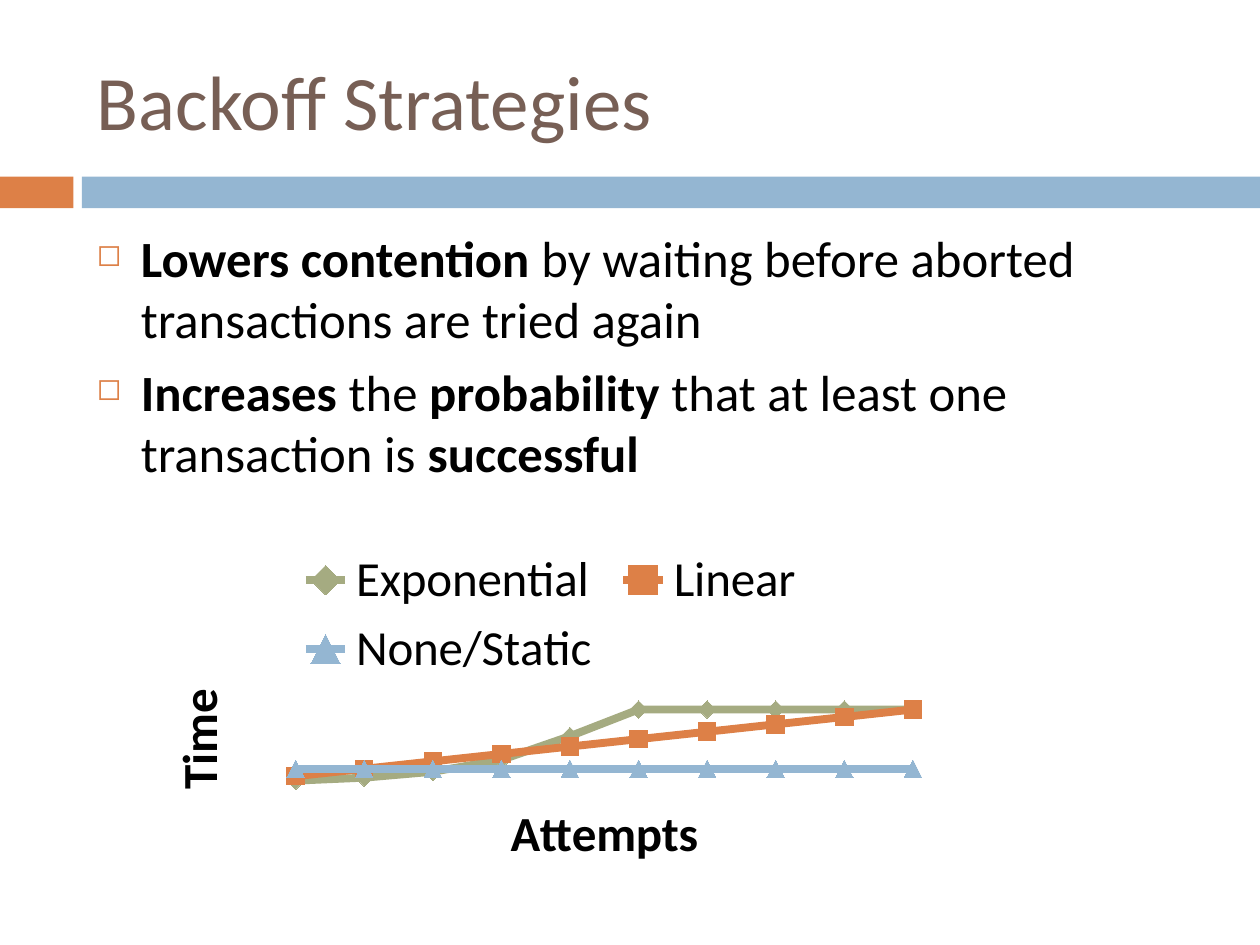
from lxml import etree
from pptx import Presentation
from pptx.chart.data import CategoryChartData
from pptx.dml.color import RGBColor
from pptx.enum import chart as kinds, shapes, text
from pptx.oxml import parse_xml
from pptx.oxml.ns import nsdecls, qn
from pptx.util import Cm, Pt

ORANGE = RGBColor(0xDD, 0x80, 0x47)
BLUE = RGBColor(0x94, 0xB6, 0xD2)
GREEN = RGBColor(0xA5, 0xAB, 0x81)
BROWN = RGBColor(0x77, 0x5F, 0x55)
BLACK = RGBColor(0, 0, 0)


def style(font, size, color, bold=False):
    font.name, font.size, font.bold = "Calibri", Pt(size), bold
    font.color.rgb = color


deck = Presentation()
deck.slide_width, deck.slide_height = Cm(25.4), Cm(19.05)
page = deck.slides.add_slide(deck.slide_layouts[5])

# Title
title = page.shapes.title
title.left, title.top, title.width, title.height = Cm(1.7), Cm(0.64), Cm(22.66), Cm(2.74)
title.text_frame.text = "Backoff Strategies"
title.text_frame.vertical_anchor = text.MSO_ANCHOR.MIDDLE
para = title.text_frame.paragraphs[0]
para.alignment = text.PP_ALIGN.LEFT
style(para.runs[0].font, 44, BROWN)

# Coloured band under the title
for left, width, color in ((0, 1.48, ORANGE), (1.65, 23.75, BLUE)):
    bar = page.shapes.add_shape(
        shapes.MSO_SHAPE.RECTANGLE, Cm(left), Cm(3.56), Cm(width), Cm(0.64))
    bar.shadow.inherit = False
    bar.fill.solid()
    bar.fill.fore_color.rgb = color
    bar.line.fill.background()

# Bulleted points, as (wording, bold) spans
points = [
    [("Lowers contention", True),
     (" by waiting before aborted transactions are tried again", False)],
    [("Increases ", True), ("the ", False), ("probability", True),
     (" that at least one transaction is ", False), ("successful", True)],
]
box = page.shapes.add_textbox(Cm(1.7), Cm(4.45), Cm(22.66), Cm(5.66))
frame = box.text_frame
frame.word_wrap = True
for index, point in enumerate(points):
    para = frame.paragraphs[0] if index == 0 else frame.add_paragraph()
    para.space_before = Pt(7)
    for wording, bold in point:
        span = para.add_run()
        span.text = wording
        style(span.font, 29, BLACK, bold)
    props = para._p.get_or_add_pPr()
    props.set("marL", str(Cm(0.89)))
    props.set("indent", str(-Cm(0.89)))
    bullet_color = etree.SubElement(props, qn("a:buClr"))
    etree.SubElement(bullet_color, qn("a:srgbClr"), val=str(ORANGE))
    etree.SubElement(props, qn("a:buSzPct"), val="60000")
    etree.SubElement(props, qn("a:buChar"), char="◻")

# Line chart of waiting time per attempt
data = CategoryChartData()
data.categories = [str(attempt) for attempt in range(1, 11)]
data.add_series("Exponential", [min(2 ** n, 100) for n in range(2, 12)])
data.add_series("Linear", range(10, 101, 10))
data.add_series("None/Static", [20] * 10)
chart = page.shapes.add_chart(
    kinds.XL_CHART_TYPE.LINE_MARKERS, Cm(2.77), Cm(10.72), Cm(16.66), Cm(7.47), data).chart
style(chart.font, 10, BLACK)
chart.has_title = False
chart.has_legend = True
chart.legend.position = kinds.XL_LEGEND_POSITION.TOP
chart.legend.include_in_layout = False
style(chart.legend.font, 28, BLACK)

MARKERS = kinds.XL_MARKER_STYLE
looks = ((GREEN, MARKERS.DIAMOND), (ORANGE, MARKERS.SQUARE), (BLUE, MARKERS.TRIANGLE))
for series, (color, symbol) in zip(chart.plots[0].series, looks):
    series.smooth = False
    series.format.line.width = Pt(4.5)
    series.format.line.color.rgb = color
    series.marker.style, series.marker.size = symbol, 10
    series.marker.format.fill.solid()
    series.marker.format.fill.fore_color.rgb = color
    series.marker.format.line.fill.background()

# Hidden axes that keep their titles
for axis, caption in ((chart.category_axis, "Attempts"), (chart.value_axis, "Time")):
    axis.has_major_gridlines = False
    axis.axis_title.text_frame.text = caption
    style(axis.axis_title.text_frame.paragraphs[0].runs[0].font, 28, BLACK, True)
    axis.visible = False
chart.value_axis.minimum_scale, chart.value_axis.maximum_scale = 0, 120

# Fixed plot area, as fractions of the chart
area = chart._chartSpace.chart.plotArea
for old in area.findall(qn("c:layout")):
    area.remove(old)
area.insert(0, parse_xml(
    f'<c:layout {nsdecls("c")}><c:manualLayout><c:layoutTarget val="inner"/>'
    '<c:xMode val="edge"/><c:yMode val="edge"/><c:x val="0.15"/><c:y val="0.44"/>'
    '<c:w val="0.83"/><c:h val="0.24"/></c:manualLayout></c:layout>'))

deck.save("out.pptx")
